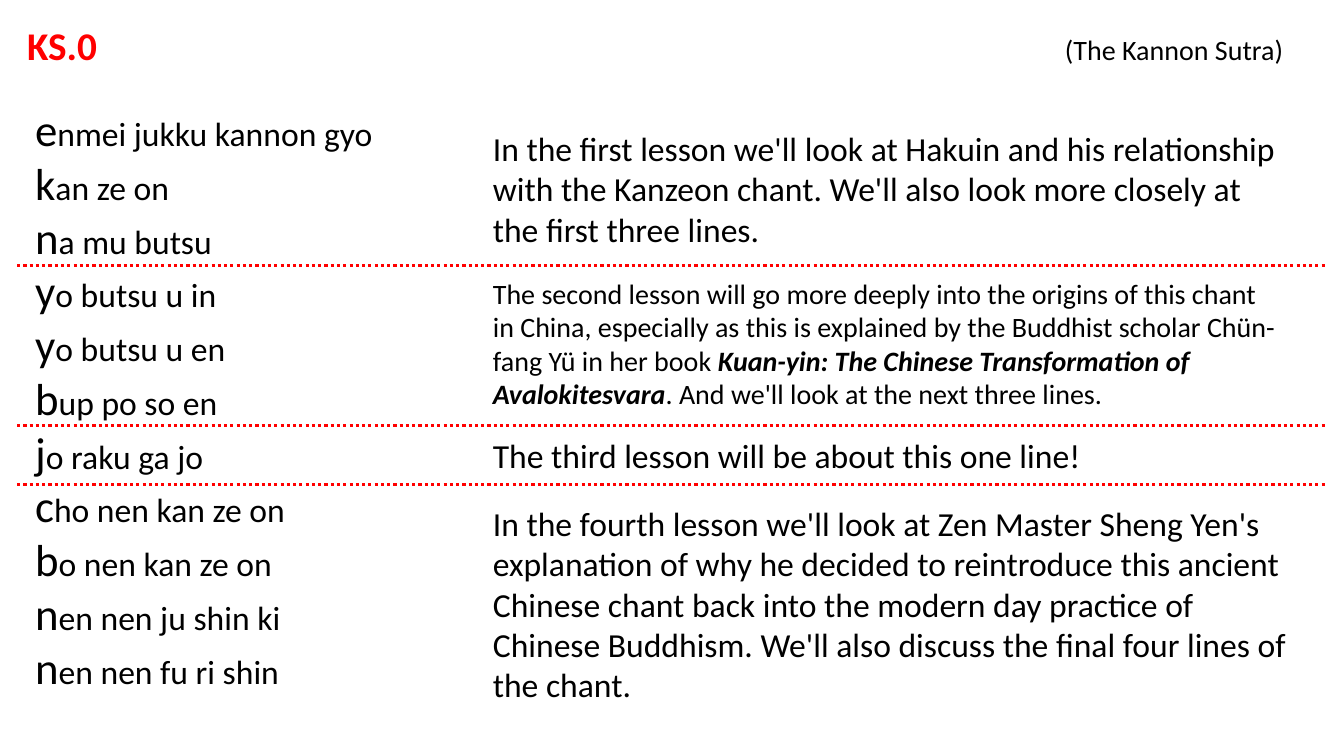
from lxml import etree
from pptx import Presentation
from pptx import util as u
from pptx.dml.color import RGBColor
from pptx.enum import dml, shapes, text
from pptx.oxml import ns

COLORS = {"ink": "000000", "accent": "FF0000"}
MAIN = {"size": u.Pt(24)}
SMALL = {"size": u.Pt(20)}
BOOK = {**SMALL, "bold": True, "italic": True}
INITIAL = {"size": u.Pt(32)}
HEADING = {"size": u.Pt(28), "bold": True}


class LessonSlide:
    font = "Calibri"

    def __init__(self, prs):
        self.slide = prs.slides.add_slide(prs.slide_layouts[6])

    def box(self, left, top, width, height, paragraphs):
        """Each paragraph is a list of (words, format, colour name) runs."""
        frame = self.slide.shapes.add_textbox(
            *map(u.Inches, (left, top, width, height))).text_frame
        frame.word_wrap = True
        frame.auto_size = text.MSO_AUTO_SIZE.SHAPE_TO_FIT_TEXT
        for i, runs in enumerate(paragraphs):
            paragraph = frame.add_paragraph() if i else frame.paragraphs[0]
            for words, style, color in runs:
                run = paragraph.add_run()
                run.text = words
                run.font.name = self.font
                run.font.color.rgb = RGBColor.from_string(COLORS[color])
                for key, value in style.items():
                    setattr(run.font, key, value)
        return frame

    def right_tab(self, paragraph, position):
        tabs = etree.SubElement(paragraph._p.get_or_add_pPr(), ns.qn("a:tabLst"))
        etree.SubElement(tabs, ns.qn("a:tab"), pos=str(u.Inches(position)), algn="r")

    def divider(self, y, left=0.17, right=13.17):
        rule = self.slide.shapes.add_connector(
            shapes.MSO_CONNECTOR.STRAIGHT, *map(u.Inches, (left, y, right, y)))
        rule.line.color.rgb = RGBColor.from_string(COLORS["accent"])
        rule.line.width = u.Pt(2.25)
        rule.line.dash_style = dml.MSO_LINE.ROUND_DOT
        etree.SubElement(rule._element.spPr, ns.qn("a:effectLst"))


CHANT = [
    "enmei jukku kannon gyo", "kan ze on", "na mu butsu",
    "yo butsu u in", "yo butsu u en", "bup po so en",
    "jo raku ga jo",
    "cho nen kan ze on", "bo nen kan ze on", "nen nen ju shin ki",
    "nen nen fu ri shin",
]

# Top, width, height and runs of each lesson description
LESSONS = [
    (1.22, 8.1, 1.31, [
        ("In the first lesson we'll look at Hakuin and his relationship with "
         "the Kanzeon chant. We'll also look more closely at the first three "
         "lines.", MAIN)]),
    (2.69, 7.96, 1.45, [
        ("The second lesson will go more deeply into the origins of this chant "
         "in China, especially as this is explained by the Buddhist scholar "
         "Chün-fang Yü in her book ", SMALL),
        ("Kuan-yin: The Chinese Transformation of Avalokitesvara", BOOK),
        (". And we'll look at the next three lines.", SMALL)]),
    (4.27, 7.83, 0.5, [
        ("The third lesson will be about this one line!", MAIN)]),
    (4.94, 8.1, 2.14, [
        ("In the fourth lesson we'll look at Zen Master Sheng Yen's "
         "explanation of why he decided to reintroduce this ancient Chinese "
         "chant back into the modern day practice of Chinese Buddhism. We'll "
         "also discuss the final four lines of the chant.", MAIN)]),
]


def main():
    prs = Presentation()
    prs.slide_width, prs.slide_height = u.Inches(13.33), u.Inches(7.5)
    page = LessonSlide(prs)

    # Chant lines with large initials, in the first of three columns
    chant = page.box(0.25, 0.96, 12.84, 6.1, [
        [(line[0], INITIAL, "ink"), (line[1:], MAIN, "ink")] for line in CHANT])
    chant._txBody.bodyPr.set("numCol", "3")

    # Dividers between lessons
    for y in (2.63, 4.22, 4.81):
        page.divider(y)

    # Lesson descriptions
    for top, width, height, runs in LESSONS:
        page.box(4.79, top, width, height,
                 [[(words, style, "ink") for words, style in runs]])

    # Heading with the sutra name at the right
    heading = page.box(0.17, 0.13, 12.84, 0.58, [
        [("KS.0\t", HEADING, "accent"), ("(The Kannon Sutra)", SMALL, "ink")]])
    title = heading.paragraphs[0]
    page.right_tab(title, 12.46)
    for key, value in {"line_spacing": 1.07, "space_after": u.Pt(8)}.items():
        setattr(title, key, value)

    prs.save("out.pptx")


if __name__ == "__main__":
    main()
